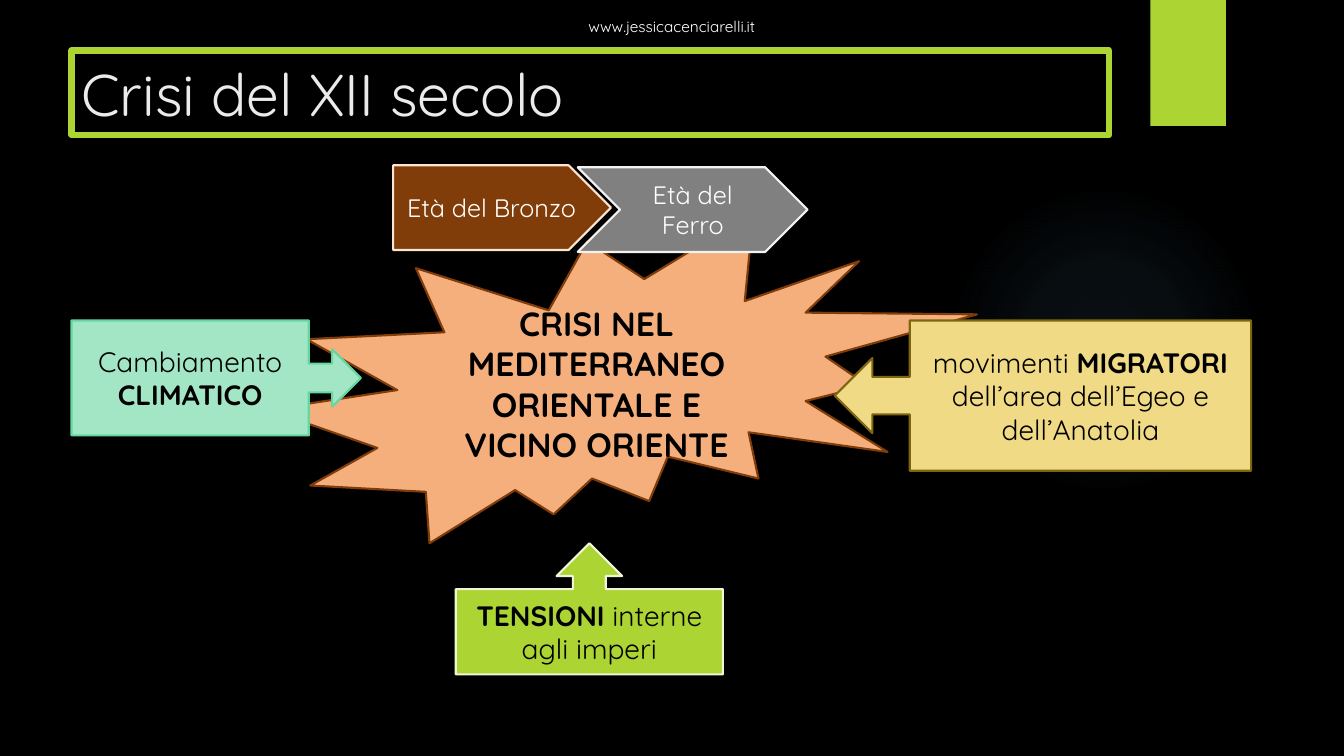
import dataclasses

import pptx
import pptx.dml.color
import pptx.enum.shapes
import pptx.enum.text
import pptx.oxml
import pptx.util

Inches = pptx.util.Inches
Pt = pptx.util.Pt
Shape = pptx.enum.shapes.MSO_SHAPE
Align = pptx.enum.text.PP_ALIGN
Anchor = pptx.enum.text.MSO_ANCHOR


@dataclasses.dataclass(frozen=True)
class Theme:
    font: str = "Quicksand"
    background: str = "000000"
    dark: str = "000000"
    light: str = "FFFFFF"
    title: str = "EBEBEB"
    lime: str = "ACD433"
    lime_edge: str = "EEF6D6"
    orange: str = "F5AF7C"
    brown: str = "803C09"
    brown_edge: str = "FCE4D3"
    gray: str = "808080"
    gray_edge: str = "F2F2F2"
    sand: str = "F0DA85"
    sand_edge: str = "7D660F"
    mint: str = "A3E6C6"
    mint_edge: str = "65D6A0"
    glow: str = "7AC4F0"
    site_size: int = 11
    age_size: int = 18
    cause_size: int = 20
    crisis_size: int = 24
    title_size: int = 42
    edge_width: float = 1.5
    frame_width: float = 4.5


theme = Theme()
rgb = pptx.dml.color.RGBColor.from_string


def draw_shape(kind, place, fill=None, edge=None, edge_width=theme.edge_width):
    shape = page.shapes.add_shape(kind, *[Inches(length) for length in place])
    shape.shadow.inherit = False
    if fill:
        shape.fill.solid()
        shape.fill.fore_color.rgb = rgb(fill)
    else:
        shape.fill.background()
    if edge:
        shape.line.color.rgb = rgb(edge)
        shape.line.width = Pt(edge_width)
    else:
        shape.line.fill.background()
    return shape


def write(shape, spans, size, color, align=Align.CENTER):
    """Fill the shape with one paragraph of (text, bold) spans."""
    frame = shape.text_frame
    frame.word_wrap = True
    frame.vertical_anchor = Anchor.MIDDLE
    para = frame.paragraphs[0]
    para.alignment = align
    for text, bold in spans:
        span = para.add_run()
        span.text = text
        span.font.name = theme.font
        span.font.size = Pt(size)
        span.font.bold = bold
        span.font.color.rgb = rgb(color)


deck = pptx.Presentation()
deck.slide_width = Inches(13.33)
deck.slide_height = Inches(7.5)
page = deck.slides.add_slide(deck.slide_layouts[6])
page.background.fill.solid()
page.background.fill.fore_color.rgb = rgb(theme.background)

# Faint round glow, fading outwards
glow = draw_shape(Shape.OVAL, (9.41, 1.83, 3.08, 3.08), theme.glow)
stops = "".join(
    f'<a:gs pos="{position * 1000}"><a:srgbClr val="{theme.glow}">'
    f'<a:alpha val="{opacity * 1000}"/></a:srgbClr></a:gs>'
    for position, opacity in [(0, 7), (36, 6), (69, 0)]
)
gradient = pptx.oxml.parse_xml(
    '<a:gradFill xmlns:a="http://schemas.openxmlformats.org/drawingml/2006/main">'
    f'<a:gsLst>{stops}</a:gsLst><a:path path="circle">'
    '<a:fillToRect l="50000" t="50000" r="50000" b="50000"/></a:path></a:gradFill>'
)
properties = glow._element.spPr
properties.replace(properties.find(pptx.oxml.ns.qn("a:solidFill")), gradient)

# Header
draw_shape(Shape.RECTANGLE, (11.41, 0, 0.75, 1.25), theme.lime)
site = page.shapes.add_textbox(Inches(5.47), Inches(0.12), Inches(2.39), Inches(0.29))
write(site, [("www.jessicacenciarelli.it", False)], theme.site_size, theme.light)
title = draw_shape(
    Shape.RECTANGLE, (0.71, 0.5, 10.29, 0.84), edge=theme.lime, edge_width=theme.frame_width
)
write(title, [("Crisi del XII secolo", False)], theme.title_size, theme.title, Align.LEFT)

# Crisis at the centre
crisis = draw_shape(Shape.EXPLOSION2, (2.66, 2.11, 7.03, 3.28), theme.orange, theme.brown)
write(
    crisis,
    [("CRISI NEL MEDITERRANEO ORIENTALE E VICINO ORIENTE", True)],
    theme.crisis_size,
    theme.dark,
)

# Causes pointing at the crisis; the last number is the share taken by the box
causes = [
    (Shape.UP_ARROW_CALLOUT, (4.52, 5.39, 2.65, 1.3), theme.lime, theme.lime_edge, 0.65,
     [("TENSIONI", True), (" interne agli imperi", False)]),
    (Shape.LEFT_ARROW_CALLOUT, (8.28, 3.18, 4.13, 1.49), theme.sand, theme.sand_edge, 0.82,
     [("movimenti ", False), ("MIGRATORI", True),
      (" dell’area dell’Egeo e dell’Anatolia", False)]),
    (Shape.RIGHT_ARROW_CALLOUT, (0.71, 3.18, 2.87, 1.14), theme.mint, theme.mint_edge, 0.82,
     [("Cambiamento ", False), ("CLIMATICO", True)]),
]
for kind, place, fill, edge, box_share, spans in causes:
    cause = draw_shape(kind, place, fill, edge)
    cause.adjustments[3] = box_share
    write(cause, spans, theme.cause_size, theme.dark)

# Passage from one age to the next
ages = [
    (Shape.PENTAGON, (3.9, 1.64, 2.16, 0.84), theme.brown, theme.brown_edge, "Età del Bronzo"),
    (Shape.CHEVRON, (5.73, 1.66, 2.28, 0.84), theme.gray, theme.gray_edge, "Età del Ferro"),
]
for kind, place, fill, edge, name in ages:
    age = draw_shape(kind, place, fill, edge)
    write(age, [(name, False)], theme.age_size, theme.light)

deck.save("out.pptx")
